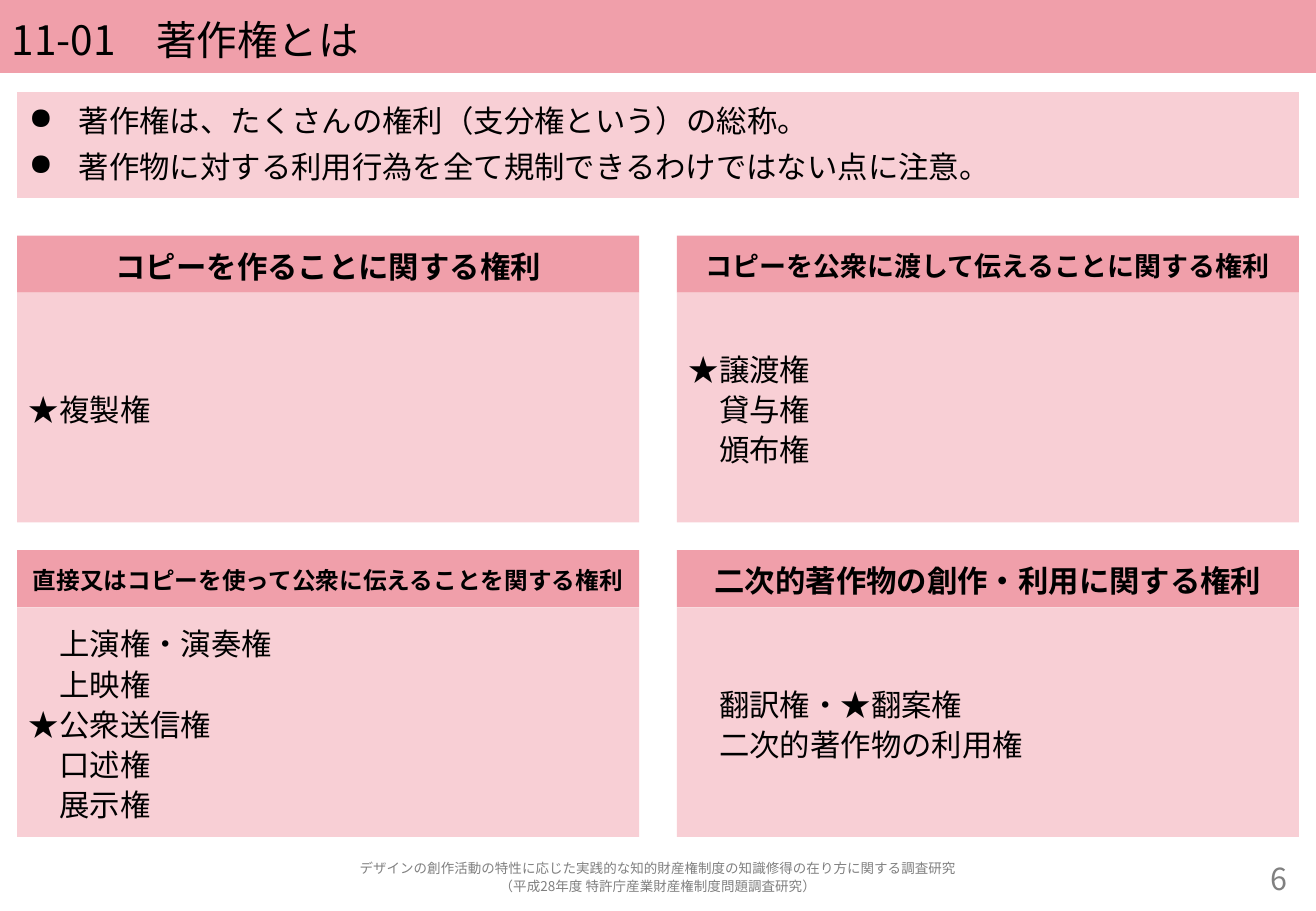
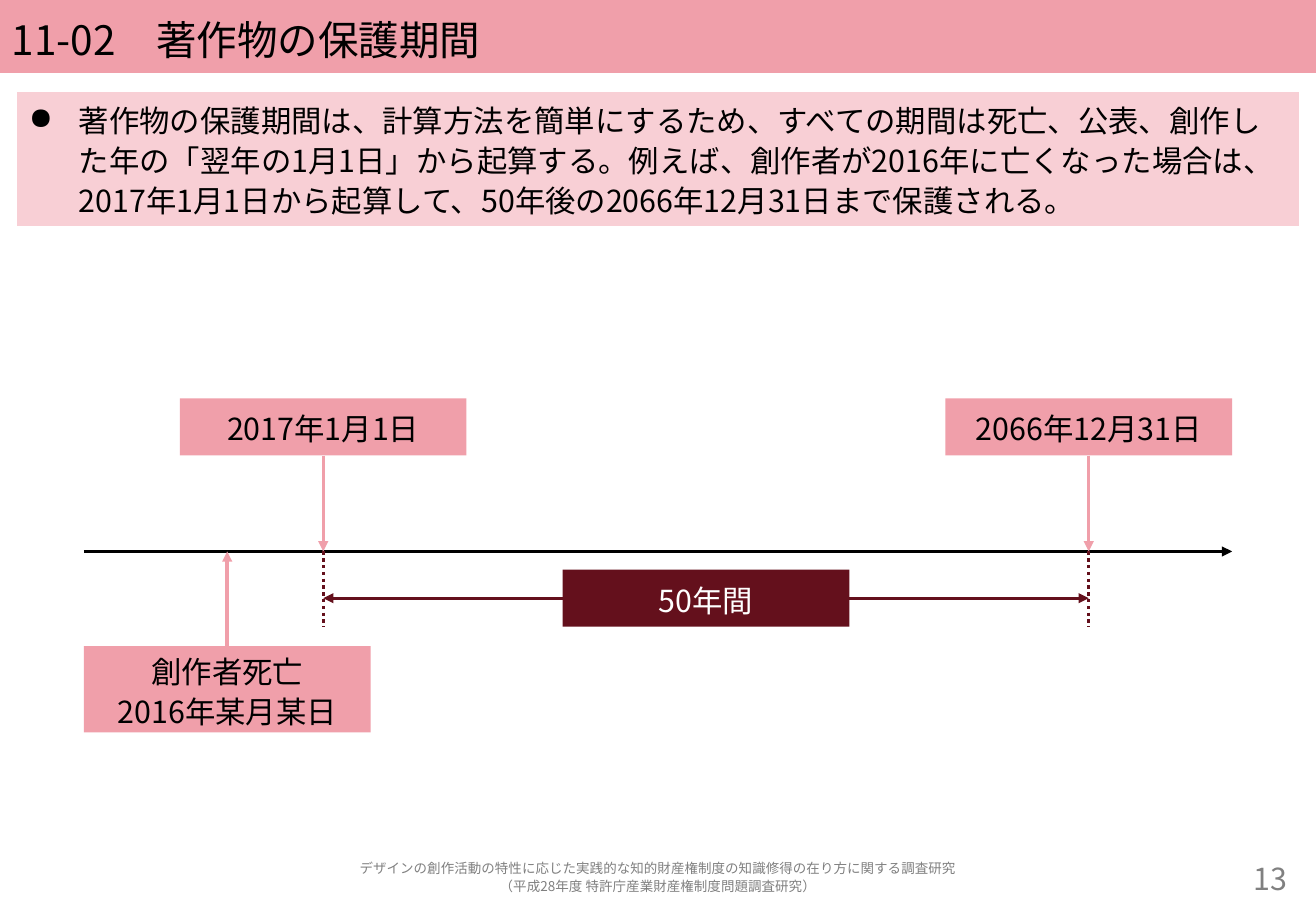
from dataclasses import dataclass

from lxml.etree import SubElement
from pptx import Presentation
from pptx.dml.color import RGBColor
from pptx.enum.dml import MSO_LINE
from pptx.enum.lang import MSO_LANGUAGE_ID as Language
from pptx.enum.shapes import MSO_CONNECTOR, MSO_SHAPE
from pptx.enum.text import MSO_ANCHOR as Anchor, PP_ALIGN as Align
from pptx.oxml.ns import qn
from pptx.shapes.autoshape import Shape
from pptx.shapes.connector import Connector
from pptx.slide import Slide
from pptx.util import Inches, Pt

FONT = "Noto Sans CJK JP"
ROSE, BLUSH, WINE = "F09FAA", "F8CFD5", "64101C"
BLACK, WHITE, GREY = "000000", "FFFFFF", "808080"
PAGE_WIDTH, PAGE_HEIGHT = 10.83, 7.5
MARGIN, CONTENT_WIDTH = 0.14, 10.55
FOOTER_TOP, FOOTER_HEIGHT = 7.06, 0.31
LINE_PITCH = 1.32  # line height as a multiple of the text size
BULLET_INDENT = 0.41
LABEL_HEIGHT = 0.47
FOOTER = [
    "デザインの創作活動の特性に応じた実践的な知的財産権制度の知識修得の在り方に関する調査研究",
    "（平成28年度 特許庁産業財産権制度問題調査研究）",
]

PANEL_WIDTH, PANEL_BODY_HEIGHT = 5.12, 1.89
PANEL_LEFTS = (MARGIN, 5.57)
PANEL_TOPS = (1.94, 4.53)

DATE_WIDTH, DATE_TOP = 2.36, 3.28
AXIS_LEFT, AXIS_RIGHT, AXIS_Y = 0.69, 10.14, 4.54
DEATH_X, START_X, END_X = 1.87, 2.66, 8.96
DEATH_TOP, DEATH_HEIGHT = 5.32, 0.71
PERIOD_TOP = 4.69
GUIDE_BOTTOM = PERIOD_TOP + LABEL_HEIGHT
TOP, LEFT, BOTTOM, RIGHT = range(4)


@dataclass(frozen=True)
class Panel:
    """One group of rights in the two-by-two grid."""
    column: int
    row: int
    heading: str
    heading_size: int
    rights: list[str]


@dataclass(frozen=True)
class DateMark:
    """A dated label above the time axis."""
    x: float
    text: str


PANELS = [
    Panel(0, 0, "コピーを作ることに関する権利", 18, ["★複製権"]),
    Panel(0, 1, "直接又はコピーを使って公衆に伝えることを関する権利", 14,
          ["　上演権・演奏権", "　上映権", "★公衆送信権", "　口述権", "　展示権"]),
    Panel(1, 0, "コピーを公衆に渡して伝えることに関する権利", 16,
          ["★譲渡権", "　貸与権", "　頒布権"]),
    Panel(1, 1, "二次的著作物の創作・利用に関する権利", 18,
          ["　翻訳権・★翻案権", "　二次的著作物の利用権"]),
]
DATE_MARKS = [DateMark(START_X, "2017年1月1日"), DateMark(END_X, "2066年12月31日")]


def rgb(value: str) -> RGBColor:
    return RGBColor.from_string(value)


def write(box: Shape, lines: list[str], *, size: float = 18, color: str = BLACK,
          bold: bool = False, align: Align = Align.LEFT,
          anchor: Anchor = Anchor.MIDDLE, bullet: str = "") -> None:
    """Fill a box with one paragraph per line, all in the same format."""
    frame = box.text_frame
    frame.word_wrap = True
    frame.vertical_anchor = anchor
    for index, line in enumerate(lines):
        para = frame.add_paragraph() if index else frame.paragraphs[0]
        para.alignment = align
        para.line_spacing = Pt(size * LINE_PITCH)
        if bullet:
            para.space_before = Pt(size * 0.2)
            properties = para._p.get_or_add_pPr()
            properties.set("marL", str(Inches(BULLET_INDENT)))
            properties.set("indent", str(-Inches(BULLET_INDENT)))
            SubElement(properties, qn("a:buChar")).set("char", bullet)
        span = para.add_run()
        span.text = line
        font = span.font
        font.name, font.size, font.bold = FONT, Pt(size), bold
        font.color.rgb = rgb(color)
        font.language_id = Language.JAPANESE
        latin = font._element.find(qn("a:latin"))
        east_asian = latin.makeelement(qn("a:ea"), {"typeface": FONT})
        latin.addnext(east_asian)


def add_box(page: Slide, left: float, top: float, width: float, height: float,
            fill: str, lines: list[str], **text_format) -> Shape:
    box = page.shapes.add_shape(MSO_SHAPE.RECTANGLE, Inches(left), Inches(top),
                                Inches(width), Inches(height))
    box.shadow.inherit = False
    box.fill.solid()
    box.fill.fore_color.rgb = rgb(fill)
    box.line.fill.background()
    write(box, lines, **text_format)
    return box


def add_footer_text(page: Slide, left: float, width: float, lines: list[str],
                    **text_format) -> None:
    box = page.shapes.add_textbox(Inches(left), Inches(FOOTER_TOP),
                                  Inches(width), Inches(FOOTER_HEIGHT))
    write(box, lines, color=GREY, **text_format)


def add_line(page: Slide, start: tuple[float, float], end: tuple[float, float],
             color: str, *, arrow: bool = True, dotted: bool = False) -> Connector:
    line = page.shapes.add_connector(MSO_CONNECTOR.STRAIGHT,
                                     *(Inches(value) for value in (*start, *end)))
    line.line.color.rgb = rgb(color)
    line.line.width = Pt(2)
    if dotted:
        line.line.dash_style = MSO_LINE.ROUND_DOT
    if arrow:
        SubElement(line.line._get_or_add_ln(), qn("a:tailEnd")).set("type", "triangle")
    SubElement(line._element.spPr, qn("a:effectLst"))
    return line


def add_page(deck: Presentation, title: str, number: int,
             points: list[str], points_height: float) -> Slide:
    """Add a page with the shared title band, key points and footer."""
    page = deck.slides.add_slide(deck.slide_layouts[6])
    add_box(page, 0, 0, PAGE_WIDTH, 0.6, ROSE, [title], size=24)
    add_box(page, MARGIN, 0.76, CONTENT_WIDTH, points_height, BLUSH, points,
            anchor=Anchor.TOP, bullet="●")
    add_footer_text(page, 9.35, 1.34, [str(number)], align=Align.RIGHT)
    add_footer_text(page, MARGIN, CONTENT_WIDTH, FOOTER, size=8, align=Align.CENTER)
    return page


def add_panel(page: Slide, panel: Panel) -> None:
    left, top = PANEL_LEFTS[panel.column], PANEL_TOPS[panel.row]
    add_box(page, left, top, PANEL_WIDTH, LABEL_HEIGHT, ROSE, [panel.heading],
            size=panel.heading_size, bold=True, align=Align.CENTER)
    add_box(page, left, top + LABEL_HEIGHT, PANEL_WIDTH, PANEL_BODY_HEIGHT, BLUSH,
            panel.rights)


def add_label(page: Slide, center: float, top: float, lines: list[str], *,
              height: float = LABEL_HEIGHT, fill: str = ROSE,
              color: str = BLACK) -> Shape:
    return add_box(page, center - DATE_WIDTH / 2, top, DATE_WIDTH, height, fill, lines,
                   color=color, align=Align.CENTER)


def add_timeline(page: Slide) -> None:
    add_line(page, (AXIS_LEFT, AXIS_Y), (AXIS_RIGHT, AXIS_Y), BLACK)

    death = add_label(page, DEATH_X, DEATH_TOP, ["創作者死亡", "2016年某月某日"],
                      height=DEATH_HEIGHT)
    arrow = add_line(page, (DEATH_X, DEATH_TOP), (DEATH_X, AXIS_Y), ROSE)
    arrow.begin_connect(death, TOP)

    for mark in DATE_MARKS:
        label = add_label(page, mark.x, DATE_TOP, [mark.text])
        arrow = add_line(page, (mark.x, DATE_TOP + LABEL_HEIGHT), (mark.x, AXIS_Y), ROSE)
        arrow.begin_connect(label, BOTTOM)
        add_line(page, (mark.x, AXIS_Y), (mark.x, GUIDE_BOTTOM), WINE,
                 arrow=False, dotted=True)

    center = (START_X + END_X) / 2
    period = add_label(page, center, PERIOD_TOP, ["50年間"], fill=WINE, color=WHITE)
    period_y = PERIOD_TOP + LABEL_HEIGHT / 2
    for side, x in ((LEFT, START_X), (RIGHT, END_X)):
        arrow = add_line(page, (center, period_y), (x, period_y), WINE)
        arrow.begin_connect(period, side)


def main() -> None:
    deck = Presentation()
    deck.slide_width, deck.slide_height = Inches(PAGE_WIDTH), Inches(PAGE_HEIGHT)

    rights_page = add_page(deck, "11-01　著作権とは", 6, [
        "著作権は、たくさんの権利（支分権という）の総称。",
        "著作物に対する利用行為を全て規制できるわけではない点に注意。",
    ], 0.87)
    for panel in PANELS:
        add_panel(rights_page, panel)

    term_page = add_page(deck, "11-02　著作物の保護期間", 13, [
        "著作物の保護期間は、計算方法を簡単にするため、すべての期間は死亡、公表、"
        "創作した年の「翌年の1月1日」から起算する。例えば、創作者が2016年に"
        "亡くなった場合は、2017年1月1日から起算して、50年後の2066年12月31日まで"
        "保護される。",
    ], 1.1)
    add_timeline(term_page)

    deck.save("out.pptx")


if __name__ == "__main__":
    main()
